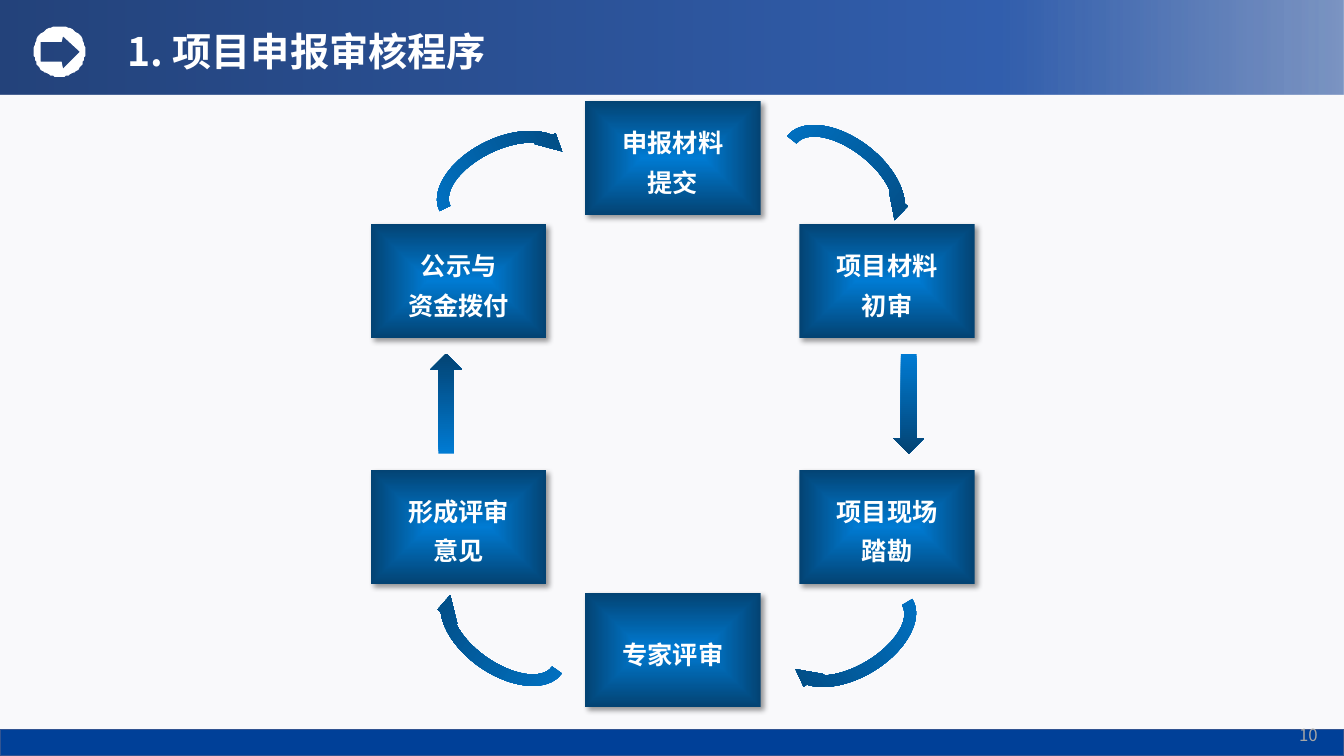
import math
from lxml import etree
from pptx import Presentation, util as u
from pptx.dml.color import RGBColor
from pptx.enum import shapes, text
from pptx.oxml import ns

Pt = u.Pt
COLOR = {
    "page": "F9F9FB", "footer": "004098", "footer_edge": "325491",
    "header_left": "23427A", "header_mid": "315EAD", "header_right": "2B549E",
    "light": "007BD3", "dark": "034373", "white": "FFFFFF",
    "number": "A6A6A6", "shadow": "000000",
}
BODY_FONT, TITLE_FONT = "Noto Sans CJK TC", "Noto Sans CJK SC"
BLUE_STOPS = [(0, "light", 100), (100, "dark", 100)]
SHAPE = shapes.MSO_SHAPE

# label, column and row of each step on a 3 x 5 grid, clockwise from the top
STEPS = [
    ("申报材料\n提交", 1, 0),
    ("项目材料\n初审", 2, 1),
    ("项目现场\n踏勘", 2, 3),
    ("专家评审", 1, 4),
    ("形成评审\n意见", 0, 3),
    ("公示与\n资金拨付", 0, 1),
]
# left, top and rotation, relative to the cycle's box
CURVED_ARROWS = [(39.6, 22.3, 334), (282.2, 22.3, 38),
                 (288, 347.8, 149), (39.6, 345.6, 215)]
STRAIGHT_ARROWS = [(42.5, 180.7, 0), (373, 180.7, 180)]


def rgb(name):
    return RGBColor.from_string(COLOR[name])


def add_block(slide, kind, left, top, width, height):
    """Add a preset shape without outline or shadow."""
    block = slide.shapes.add_shape(kind, Pt(left), Pt(top), Pt(width), Pt(height))
    block.line.fill.background()
    block.shadow.inherit = False
    return block


def fill_solid(shape, name):
    shape.fill.solid()
    shape.fill.fore_color.rgb = rgb(name)


def fill_gradient(shape, stops, angle=None):
    """Linear gradient at a clockwise angle, or from the centre without one."""
    shape.fill.background()
    empty = shape.element.spPr.find(ns.qn("a:noFill"))
    gradient = etree.Element(ns.qn("a:gradFill"), rotWithShape="1")
    stop_list = etree.SubElement(gradient, ns.qn("a:gsLst"))
    for position, name, opacity in stops:
        stop = etree.SubElement(stop_list, ns.qn("a:gs"), pos=str(position * 1000))
        shade = etree.SubElement(stop, ns.qn("a:srgbClr"), val=COLOR[name])
        if opacity < 100:
            etree.SubElement(shade, ns.qn("a:alpha"), val=str(opacity * 1000))
    if angle is None:
        centre = etree.SubElement(gradient, ns.qn("a:path"), path="rect")
        etree.SubElement(centre, ns.qn("a:fillToRect"),
                         {side: "50000" for side in "ltrb"})
    else:
        etree.SubElement(gradient, ns.qn("a:lin"), ang=str(angle * 60000), scaled="0")
    empty.getparent().replace(empty, gradient)


def add_soft_shadow(shape):
    effects = shape.element.spPr.find(ns.qn("a:effectLst"))
    outer = etree.SubElement(
        effects, ns.qn("a:outerShdw"), blurRad=str(Pt(4)), dist=str(Pt(3)),
        dir=str(45 * 60000), algn="tl", rotWithShape="0")
    shade = etree.SubElement(outer, ns.qn("a:srgbClr"), val=COLOR["shadow"])
    etree.SubElement(shade, ns.qn("a:alpha"), val="40000")


def style_text(frame, font, size, color, align, bold=False, spacing=None):
    for paragraph in frame.paragraphs:
        paragraph.alignment = align
        paragraph.line_spacing = spacing
        for run in paragraph.runs:
            run.font.name, run.font.size, run.font.bold = font, Pt(size), bold
            run.font.color.rgb = rgb(color)
            etree.SubElement(run.font._element, ns.qn("a:ea"), typeface=font)


def add_arrow_badge(slide, left, top, width, height):
    """White disc with a right arrow cut out of it."""
    def scaled(points):
        return [(left + x * width, top + y * height) for x, y in points]

    turns = [2 * math.pi * i / 72 for i in range(72)]
    disc = scaled([(0.5 + math.cos(a) / 2, 0.5 + math.sin(a) / 2) for a in turns])
    arrow = scaled([(0.88, 0.5), (0.56, 0.83), (0.54, 0.7), (0.14, 0.7),
                    (0.14, 0.32), (0.54, 0.32), (0.56, 0.19)])
    builder = slide.shapes.build_freeform(*disc[0], scale=Pt(1))
    builder.add_line_segments(disc[1:], close=True)
    builder.move_to(*arrow[0])
    builder.add_line_segments(arrow[1:], close=True)
    badge = builder.convert_to_shape()
    fill_solid(badge, "white")
    badge.line.fill.background()
    badge.shadow.inherit = False


def add_header(slide, left, top, width, height):
    band = add_block(slide, SHAPE.RECTANGLE, left, top, width, height)
    fill_gradient(band, [(0, "header_left", 100), (74, "header_mid", 100),
                         (100, "header_right", 60)], 0)
    add_arrow_badge(slide, left + 24, top + 18.7, 37, 36.2)

    title = slide.shapes.title
    title.left, title.top = Pt(left + 84.2), Pt(top + 19.4)
    title.width, title.height = Pt(423.4), Pt(41)
    title.text_frame.text = "1. 项目申报审核程序"
    title.text_frame.vertical_anchor = text.MSO_ANCHOR.TOP
    title.text_frame.auto_size = text.MSO_AUTO_SIZE.NONE
    style_text(title.text_frame, TITLE_FONT, 28, "white", text.PP_ALIGN.LEFT,
               bold=True, spacing=0.9)
    title.element.getparent().append(title.element)  # bring above the band


def add_footer(slide, left, top, width, height):
    band = add_block(slide, SHAPE.RECTANGLE, left, top, width, height)
    fill_solid(band, "footer")
    band.line.color.rgb = rgb("footer_edge")
    band.line.width = Pt(1)

    number = slide.shapes.add_textbox(
        Pt(left + width - 227.7), Pt(top - 5), Pt(216), Pt(28.8))
    number.text_frame.word_wrap = True
    number.text_frame.margin_top = Pt(1.5)
    number.text_frame.text = "10"
    style_text(number.text_frame, TITLE_FONT, 12, "number", text.PP_ALIGN.RIGHT)


def add_step(slide, label, left, top, width, height):
    step = add_block(slide, SHAPE.RECTANGLE, left, top, width, height)
    fill_gradient(step, BLUE_STOPS)
    add_soft_shadow(step)
    frame = step.text_frame
    frame.margin_left = frame.margin_right = 0
    frame.margin_top = frame.margin_bottom = 0
    frame.vertical_anchor = text.MSO_ANCHOR.MIDDLE
    frame.text = label
    style_text(frame, BODY_FONT, 18, "white", text.PP_ALIGN.CENTER,
               bold=True, spacing=Pt(28.1))


def add_cycle(slide, left, top, width, height):
    """Ring of review steps joined by arrows."""
    step_width, step_height = 125.3, 81.4
    column_gap = (width - step_width) / 2
    row_gap = (height - step_height) / 4
    for label, column, row in STEPS:
        add_step(slide, label, left + column * column_gap, top + row * row_gap,
                 step_width, step_height)

    for kind, places, size, angle in (
            (SHAPE.CIRCULAR_ARROW, CURVED_ARROWS, (110.2, 68.4), 0),
            (SHAPE.UP_ARROW, STRAIGHT_ARROWS, (22.3, 71.3), 270)):
        for x, y, rotation in places:
            arrow = add_block(slide, kind, left + x, top + y, *size)
            arrow.rotation = rotation
            fill_gradient(arrow, BLUE_STOPS, angle)


def main():
    deck = Presentation()
    deck.slide_width, deck.slide_height = Pt(960), Pt(540)
    slide = deck.slides.add_slide(deck.slide_layouts.get_by_name("Title Only"))
    slide.background.fill.solid()
    slide.background.fill.fore_color.rgb = rgb("page")
    add_footer(slide, 0, 521.3, 960, 18.7)
    add_header(slide, 0, 0, 960, 67.7)
    add_cycle(slide, 265, 72, 431.3, 432.8)
    deck.save("out.pptx")


if __name__ == "__main__":
    main()
